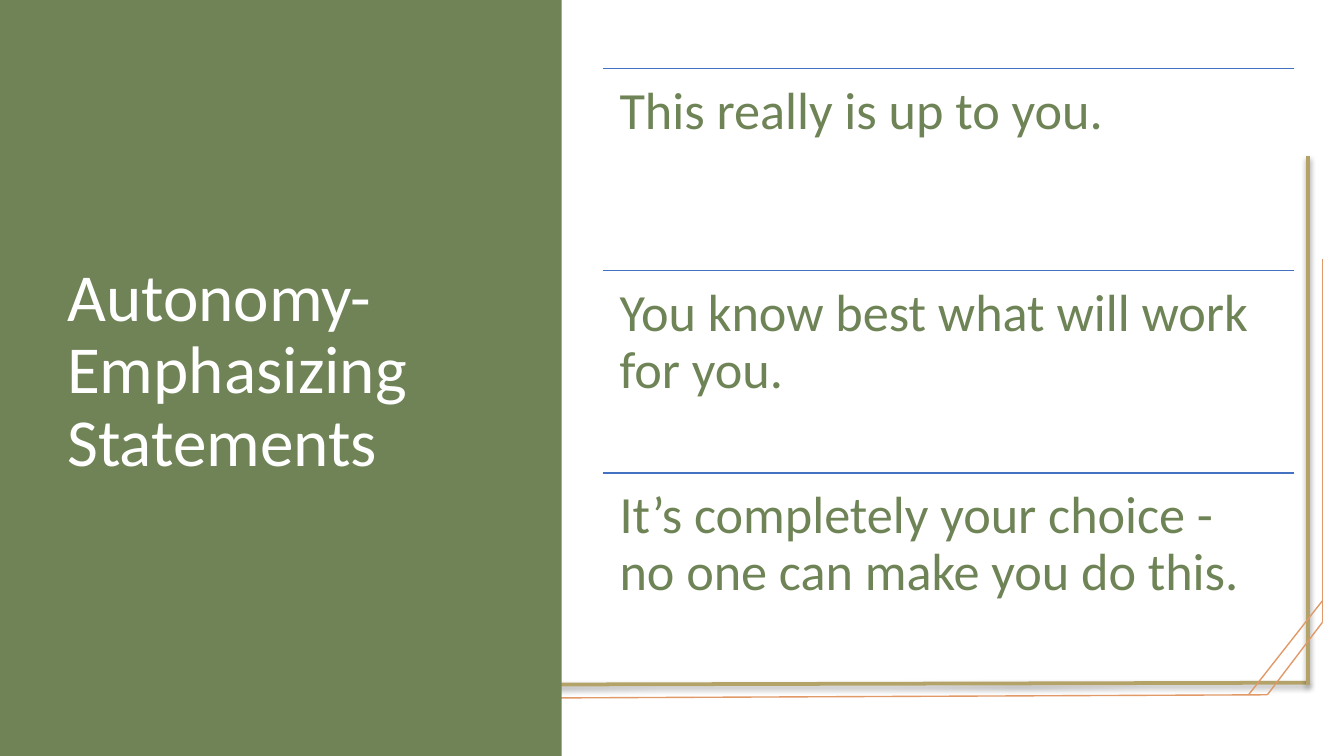
from lxml import etree
from pptx import Presentation
from pptx.dml.color import RGBColor
from pptx.enum.shapes import MSO_CONNECTOR, MSO_SHAPE
from pptx.enum.text import MSO_ANCHOR, MSO_AUTO_SIZE, PP_ALIGN
from pptx.oxml.ns import qn
from pptx.util import Inches, Pt

STRAIGHT = MSO_CONNECTOR.STRAIGHT
RECT = MSO_SHAPE.RECTANGLE
TOP, MIDDLE = MSO_ANCHOR.TOP, MSO_ANCHOR.MIDDLE
LEFT = PP_ALIGN.LEFT
FIXED = MSO_AUTO_SIZE.NONE

THEME = {
    "font": "Calibri", "title": 36, "body": 28,
    "panel": "6F8356", "green": "6F8456", "white": "FFFFFF",
    "gold": "B3A369", "orange": "E19967", "blue": "4372C3",
}
WIDE = 10
HIGH = WIDE * 9 / 16

deck = Presentation()
deck.slide_width, deck.slide_height = Inches(WIDE), Inches(HIGH)
slide = deck.slides.add_slide(deck.slide_layouts[5])
shapes = slide.shapes


def write(box, lines, size, color, anchor=TOP, pad=(0.12, 0.12)):
    frame = box.text_frame
    frame.word_wrap, frame.auto_size = True, FIXED
    frame.vertical_anchor = anchor
    frame.margin_left = frame.margin_right = Inches(pad[0])
    frame.margin_top = frame.margin_bottom = Inches(pad[1])
    frame.text = "\n".join(lines)
    for para in frame.paragraphs:
        para.alignment, para.line_spacing = LEFT, 0.9
        font = para.runs[0].font
        font.name, font.size = THEME["font"], Pt(size)
        font.color.rgb = RGBColor.from_string(THEME[color])


def rule(start, end, color, width, shade=False):
    """Draw a straight line, with a soft shadow below it if shade is set."""
    line = shapes.add_connector(STRAIGHT, *map(Inches, (*start, *end)))
    line.line.color.rgb = RGBColor.from_string(THEME[color])
    line.line.width = Pt(width)
    fx = etree.SubElement(line._element.spPr, qn("a:effectLst"))
    if shade:
        drop = etree.SubElement(fx, qn("a:outerShdw"), blurRad=str(Pt(3.1)),
                                dist=str(Pt(1.6)), dir="5400000", rotWithShape="0")
        tint = etree.SubElement(drop, qn("a:srgbClr"), val="000000")
        etree.SubElement(tint, qn("a:alpha"), val="38000")


# Frame lines along the bottom and right edges
edge, low, out, base = 9.73, 5.1, 9.84, 5.17
rule((1.25, low), (edge, 5.08), "gold", 2, shade=True)
rule((edge, 1.16), (edge, low), "gold", 2, shade=True)
for start, end in (
    ((out, 4.63), (9.43, base)),
    ((out, 4.47), (9.29, base)),
    ((9.43, base), (2.57, 5.2)),
    ((out, 4.63), (out, 1.93)),
):
    rule(start, end, "orange", 0.75)

# Title on the green panel
panel = shapes.add_shape(RECT, 0, 0, Inches(4.18), Inches(HIGH))
panel.shadow.inherit = False
panel.fill.solid()
panel.fill.fore_color.rgb = RGBColor.from_string(THEME["panel"])
panel.line.fill.background()

title = shapes.title
title.left, title.top = Inches(0.43), Inches(0.51)
title.width, title.height = Inches(3.12), Inches(4.52)
write(title, ["Autonomy-", "Emphasizing Statements"], THEME["title"], "white",
      anchor=MIDDLE, pad=(0.07, 0.04))
panel._element.addnext(title._element)  # bring the title above the panel

# Statements, one a row, each under a rule
left, top, width, foot = 4.49, 0.51, 5.14, 5.02
notes = (
    "This really is up to you.",
    "You know best what will work for you.",
    "It’s completely your choice - no one can make you do this.",
)
row = (foot - top) / len(notes)
for i, words in enumerate(notes):
    y = top + i * row
    rule((left, y), (left + width, y), "blue", 1)
    box = shapes.add_textbox(*map(Inches, (left, y, width, row)))
    write(box, [words], THEME["body"], "green")

deck.save("out.pptx")
